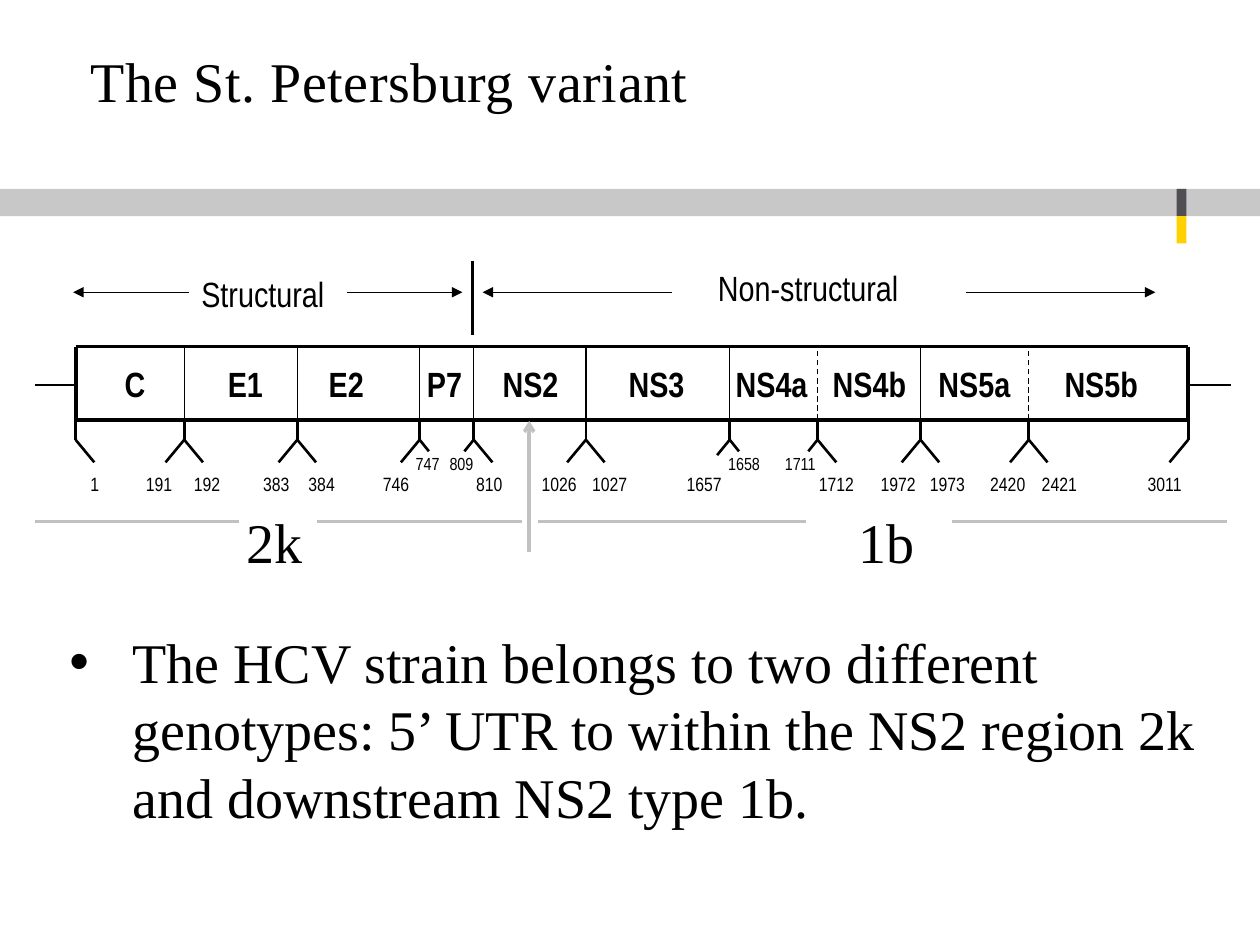
from dataclasses import dataclass

from pptx import Presentation
from pptx.dml.color import RGBColor
from pptx.enum.dml import MSO_LINE_DASH_STYLE as Dash
from pptx.enum.shapes import MSO_CONNECTOR as Connector, MSO_SHAPE as Preset
from pptx.enum.text import MSO_ANCHOR as Anchor, MSO_AUTO_SIZE as AutoSize, PP_ALIGN as Align
from pptx.oxml.ns import qn
from pptx.oxml.xmlchemy import OxmlElement
from pptx.util import Pt


@dataclass(frozen=True)
class Theme:
    ink: str = "000000"
    band: str = "C8C8C8"
    band_dark: str = "504E53"
    accent: str = "FFD100"
    genotype: str = "C1C1C1"
    serif: str = "Times New Roman"
    narrow: str = "Arial Narrow"
    main_size: float = 32
    region_size: float = 20
    position_size: float = 11
    small_size: float = 10
    frame_line: float = 2.25
    genotype_line: float = 2
    branch_line: float = 1.5
    thin_line: float = 0.75


THEME = Theme()

# Genome box edges, and the depth of the branches below it
LEFT, RIGHT, TOP, BOTTOM, FORK = 43.2, 679, 198, 239.8, 251.3
LONG, SHORT = (10.7, 12.9), (5.3, 6.6)

# Name, left, width
REGIONS = [
    ("C", 64.1, 28.8), ("E1", 123.1, 39.6), ("E2", 180.7, 39.6),
    ("P7", 236.9, 39.6), ("NS2", 280.1, 54), ("NS3", 352.1, 54),
    ("NS4a", 413.3, 64.8), ("NS4b", 468.7, 66.2), ("NS5a", 529.2, 64.8),
    ("NS5b", 601.2, 66.2),
]

# Place, divider dash (None at the ends), left leg, right leg
CLEAVAGES = [
    (LEFT, None, None, LONG),
    (105.3, Dash.SOLID, LONG, LONG),
    (169.9, Dash.SOLID, LONG, LONG),
    (239.8, Dash.SOLID, LONG, SHORT),
    (270.7, Dash.SOLID, SHORT, LONG),
    (334.8, Dash.SOLID, LONG, LONG),
    (417, Dash.SOLID, (7.2, 8.8), SHORT),
    (467.2, Dash.DASH, SHORT, LONG),
    (526, Dash.SOLID, LONG, LONG),
    (587.9, Dash.DASH, LONG, LONG),
    (RIGHT, None, LONG, None),
]

# Residue number: left edge of its label
POSITIONS = {
    "1": 44.6, "191": 76.3, "192": 103.7, "383": 143.3, "384": 169.2,
    "746": 211.7, "810": 265, "1026": 302.4, "1027": 331.2, "1657": 385.2,
    "1712": 460.8, "1972": 496.1, "1973": 524.2, "2420": 558.7,
    "2421": 588.2, "3011": 648.7,
}
RAISED_POSITIONS = {"747": 230.4, "809": 249.8, "1658": 409, "1711": 441.4}


def style_text(frame, text, size, font, bold=False):
    frame.text = text
    run = frame.paragraphs[0].runs[0]
    run.font.size = Pt(size)
    run.font.name = font
    run.font.bold = bold
    run.font.color.rgb = RGBColor.from_string(THEME.ink)
    return run


def place(shape, left, top, width, height):
    shape.left, shape.top = Pt(left), Pt(top)
    shape.width, shape.height = Pt(width), Pt(height)


def add_label(shapes, text, left, top, width, size, font=THEME.narrow, bold=False):
    label = shapes.add_textbox(Pt(left), Pt(top), Pt(width), Pt(7.2 + 1.2 * size))
    frame = label.text_frame
    frame.word_wrap = False
    frame.auto_size = AutoSize.SHAPE_TO_FIT_TEXT
    style_text(frame, text, size, font, bold)


def add_line(shapes, start, end, weight, color=THEME.ink, dash=Dash.SOLID, head=None, tail=None):
    connector = shapes.add_connector(Connector.STRAIGHT, *map(Pt, start + end))
    connector.line.color.rgb = RGBColor.from_string(color)
    connector.line.width = Pt(weight)
    connector.line.dash_style = dash
    properties = connector._element.spPr
    outline = properties.find(qn("a:ln"))
    for tag, kind in (("a:headEnd", head), ("a:tailEnd", tail)):
        if kind:
            arrowhead = OxmlElement(tag)
            arrowhead.set("type", kind)
            outline.append(arrowhead)
    properties.append(OxmlElement("a:effectLst"))


def add_bar(shapes, left, top, width, height, color):
    bar = shapes.add_shape(Preset.RECTANGLE, Pt(left), Pt(top), Pt(width), Pt(height))
    bar.shadow.inherit = False
    bar.fill.solid()
    bar.fill.fore_color.rgb = RGBColor.from_string(color)
    bar.line.fill.background()


def add_band(shapes):
    add_bar(shapes, 0, 108, 720, 15.6, THEME.band)
    add_bar(shapes, 672.3, 108, 5.7, 15.6, THEME.band_dark)
    add_bar(shapes, 672.3, 123.6, 5.7, 15.6, THEME.accent)


def fill_title(title):
    place(title, 44.6, 25.9, 675.4, 38.9)
    frame = title.text_frame
    frame.vertical_anchor = Anchor.BOTTOM
    frame.margin_top = frame.margin_bottom = 0
    frame.auto_size = AutoSize.NONE
    run = style_text(frame, "The St. Petersburg variant", THEME.main_size, THEME.serif)
    run.font._element.set("spc", "30")
    frame.paragraphs[0].alignment = Align.LEFT


def fill_body(body):
    place(body, 32.4, 355, 671, 123.8)
    frame = body.text_frame
    frame.auto_size = AutoSize.NONE
    style_text(frame, "The HCV strain belongs to two different genotypes: 5’ UTR to within "
               "the NS2 region 2k and downstream NS2 type 1b.", THEME.main_size, THEME.serif)
    paragraph = frame.paragraphs[0]
    paragraph.space_before = Pt(0)
    properties = paragraph._p.get_or_add_pPr()
    properties.set("marL", str(Pt(36)))
    properties.set("indent", str(Pt(-36)))
    bullet = OxmlElement("a:buChar")
    bullet.set("char", "•")
    properties.append(bullet)


def add_genome(shapes):
    # Frame and the untranslated ends
    for y in (TOP, BOTTOM):
        add_line(shapes, (LEFT, y), (RIGHT, y), THEME.frame_line)
    for x in (LEFT, RIGHT):
        add_line(shapes, (x, TOP), (x, BOTTOM), THEME.frame_line)
    for start, end in ((20.2, 44.6), (RIGHT, 703.4)):
        add_line(shapes, (start, 220.1), (end, 220.1), THEME.branch_line)

    # Dividers and forks at the cleavage sites
    for x, dash, left_leg, right_leg in CLEAVAGES:
        if dash is not None:
            add_line(shapes, (x, BOTTOM), (x, TOP), THEME.thin_line, dash=dash)
        add_line(shapes, (x, BOTTOM), (x, FORK), THEME.branch_line)
        for side, leg in ((-1, left_leg), (1, right_leg)):
            if leg:
                run, drop = leg
                add_line(shapes, (x, FORK), (x + side * run, FORK + drop), THEME.branch_line)

    # Region names and residue numbers
    for name, left, width in REGIONS:
        add_label(shapes, name, left, 203.6, width, THEME.region_size, bold=True)
    for positions, top, size in ((POSITIONS, 266.4, THEME.position_size),
                                 (RAISED_POSITIONS, 255.3, THEME.small_size)):
        for number, left in positions.items():
            add_label(shapes, number, left, top, 14.4 + 0.57 * size * len(number), size)


def add_protein_classes(shapes):
    add_label(shapes, "Structural", 108, 151.9, 100.8, THEME.region_size)
    add_label(shapes, "Non-structural", 403.2, 149, 141.1, THEME.region_size)
    for start, end, arrow in ((41.8, 108, "head"), (198, 264.2, "tail"),
                              (275.8, 383.8, "head"), (552.2, 660.2, "tail")):
        add_line(shapes, (start, 167), (end, 167), THEME.thin_line, **{arrow: "triangle"})
    add_line(shapes, (270, 149), (270, 191.5), THEME.branch_line)


def add_genotypes(shapes):
    add_line(shapes, (302.4, 315.4), (302.4, 240.5), THEME.genotype_line,
             THEME.genotype, tail="arrow")
    for start, end in ((20.2, 136.8), (181.4, 298.1), (307.4, 460.8), (544.3, 701.3)):
        add_line(shapes, (start, 298.1), (end, 298.1), THEME.genotype_line, THEME.genotype)
    for genotype, left in (("2k", 133.9), ("1b", 483.8)):
        add_label(shapes, genotype, left, 286.6, 47.5, THEME.main_size, THEME.serif)


def main():
    deck = Presentation()
    deck.slide_width, deck.slide_height = Pt(720), Pt(540)
    slide = deck.slides.add_slide(deck.slide_layouts[1])
    add_band(slide.shapes)
    fill_title(slide.shapes.title)
    fill_body(slide.placeholders[1])
    diagram = slide.shapes.add_group_shape().shapes
    add_genome(diagram)
    add_protein_classes(diagram)
    add_genotypes(slide.shapes)
    deck.save("out.pptx")


if __name__ == "__main__":
    main()
